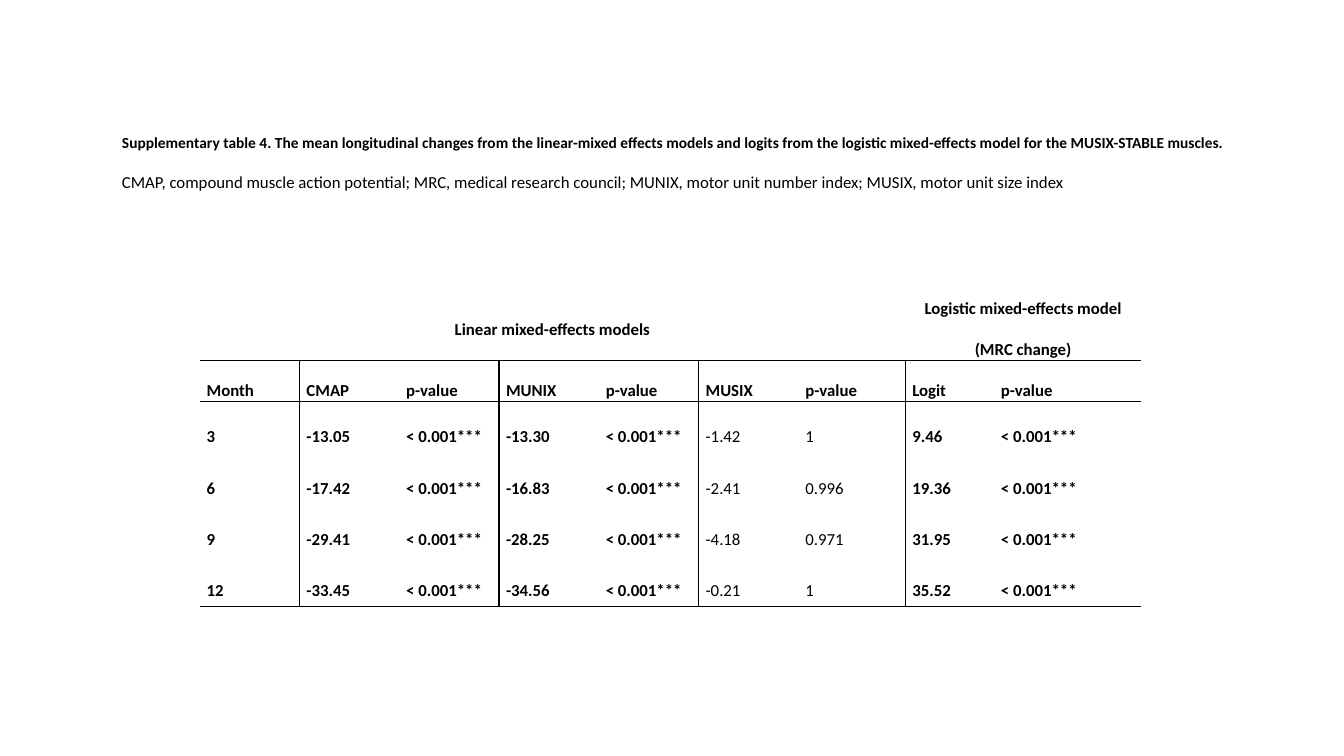
import pptx
import pptx.util
import pptx.dml.color
import pptx.enum.text
import pptx.oxml
import pptx.oxml.ns

IN = pptx.util.Inches
ALIGN = pptx.enum.text.PP_ALIGN
ANCHOR = pptx.enum.text.MSO_ANCHOR
THEME = {"font": "Calibri", "ink": "000000", "caption": 11, "text": 12, "rule": 1}
PLAIN_TABLE = "{2D5ABB26-0587-4C30-8999-92F81FD0307C}"


def write(p, text, size=THEME["text"], bold=False, align=ALIGN.LEFT, spacing=1.0, before=0):
    p.alignment, p.line_spacing = align, spacing
    p.space_before = pptx.util.Pt(before)
    r = p.add_run()
    r.text = text
    r.font.name, r.font.size, r.font.bold = THEME["font"], pptx.util.Pt(size), bold
    r.font.color.rgb = pptx.dml.color.RGBColor.from_string(THEME["ink"])


def rule(cell, sides):
    """Draw solid rules on the named sides (L, R, T, B) and none on the others."""
    tcPr = cell._tc.get_or_add_tcPr()
    for side in "LRTB":
        paint = "<a:noFill/>"
        if side in sides:
            paint = f'<a:solidFill><a:srgbClr val="{THEME["ink"]}"/></a:solidFill>'
        width = pptx.util.Pt(THEME["rule"])
        tcPr.append(pptx.oxml.parse_xml(
            f'<a:ln{side} {pptx.oxml.ns.nsdecls("a")} w="{width}">{paint}</a:ln{side}>'))


prs = pptx.Presentation()
prs.slide_width, prs.slide_height = IN(13.33), IN(7.5)
s = prs.slides.add_slide(prs.slide_layouts[5])

# Caption with its abbreviations
sp = s.shapes.title
sp.left, sp.top, sp.width, sp.height = IN(1.11), IN(1.27), IN(11.27), IN(0.69)
tf = sp.text_frame
tf.word_wrap, tf.vertical_anchor = True, ANCHOR.MIDDLE
tf.auto_size = pptx.enum.text.MSO_AUTO_SIZE.NONE
write(tf.paragraphs[0],
      "Supplementary table 4. The mean longitudinal changes from the linear-mixed effects models "
      "and logits from the logistic mixed-effects model for the MUSIX-STABLE muscles.",
      size=THEME["caption"], bold=True, align=ALIGN.JUSTIFY)
write(tf.add_paragraph(),
      "CMAP, compound muscle action potential; MRC, medical research council; "
      "MUNIX, motor unit number index; MUSIX, motor unit size index",
      align=ALIGN.JUSTIFY, before=14.6)

# Table contents
SIG = "< 0.001***"
groups = {0: ("Linear mixed-effects models", 6),
          7: ("Logistic mixed-effects model (MRC change)", 8)}
rows = [
    ["Month", "CMAP", "p-value", "MUNIX", "p-value", "MUSIX", "p-value", "Logit", "p-value"],
    ["3", "-13.05", SIG, "-13.30", SIG, "-1.42", "1", "9.46", SIG],
    ["6", "-17.42", SIG, "-16.83", SIG, "-2.41", "0.996", "19.36", SIG],
    ["9", "-29.41", SIG, "-28.25", SIG, "-4.18", "0.971", "31.95", SIG],
    ["12", "-33.45", SIG, "-34.56", SIG, "-0.21", "1", "35.52", SIG],
]
widths = [0.99] * 6 + [1.06, 0.88, 1.46]
heights = [0.65, 0.3] + [0.51] * 4
not_significant = (5, 6)
last_row, last_col = len(heights) - 1, len(widths) - 1

# Table frame
gf = s.shapes.add_table(len(heights), len(widths), IN(1.98), IN(2.76), IN(9.36), IN(3.15))
table = gf.table
table.first_row = table.horz_banding = False
table._tbl.tblPr.find(pptx.oxml.ns.qn("a:tableStyleId")).text = PLAIN_TABLE
for column, width in zip(table.columns, widths):
    column.width = IN(width)
for row, height in zip(table.rows, heights):
    row.height = IN(height)
gf.height = IN(3.15)

# Group headings
for first, (heading, last) in groups.items():
    table.cell(0, first).merge(table.cell(0, last))
    write(table.cell(0, first).text_frame.paragraphs[0], heading,
          bold=True, align=ALIGN.CENTER, spacing=2.0)

# Column headings and values
for i, values in enumerate(rows, start=1):
    for j, value in enumerate(values):
        write(table.cell(i, j).text_frame.paragraphs[0], value,
              bold=i == 1 or j not in not_significant, spacing=2.0)

# Rules round the heading row, under the table and between the measures
for i in range(last_row + 1):
    for j in range(last_col + 1):
        cell = table.cell(i, j)
        cell.margin_left = cell.margin_right = IN(0.07)
        cell.margin_top = cell.margin_bottom = 0
        cell.vertical_anchor = ANCHOR.MIDDLE
        sides = ""
        if i > 0 and j % 2 == 1:
            sides += "L"
        if i > 0 and j % 2 == 0 and j < last_col:
            sides += "R"
        if i in (1, 2):
            sides += "T"
        if i in (0, 1, last_row):
            sides += "B"
        rule(cell, sides)
        cell.fill.background()

prs.save("out.pptx")
